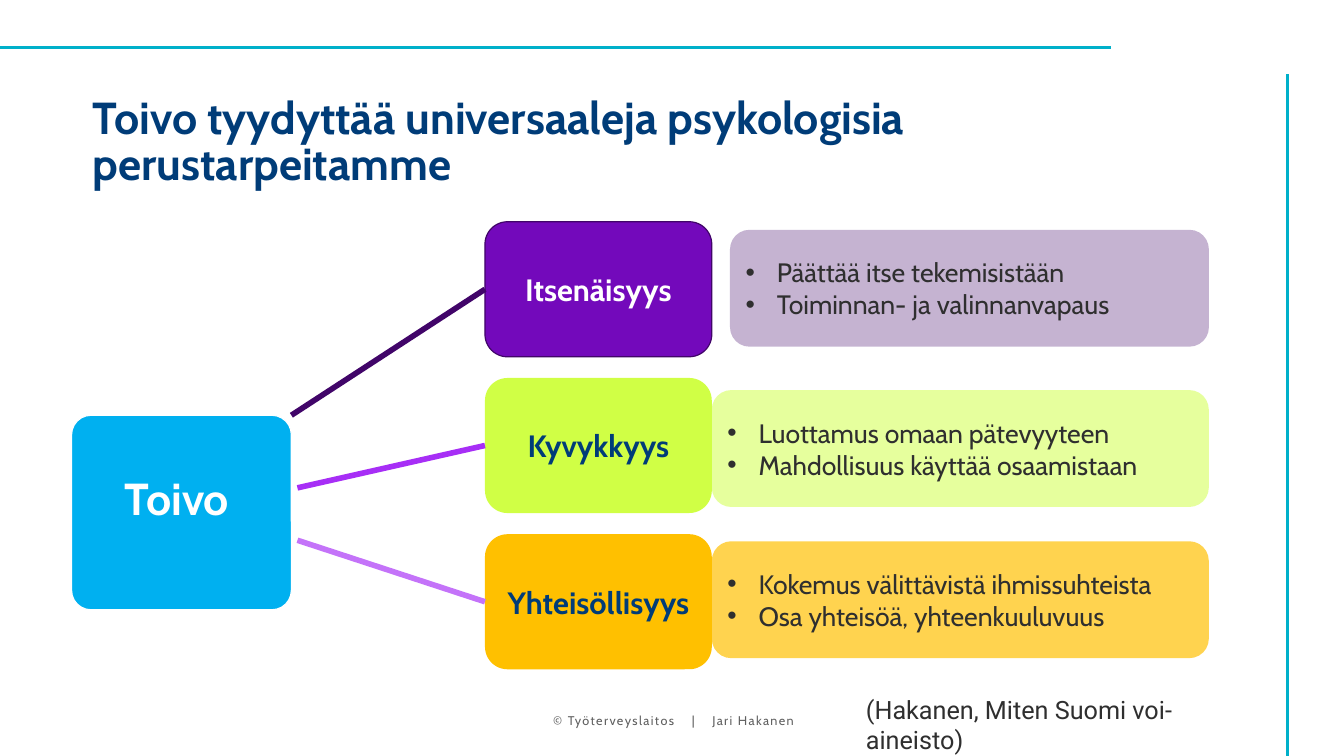
import lxml.etree
import pptx
import pptx.dml.color
import pptx.enum.shapes
import pptx.enum.text
import pptx.oxml.ns
import pptx.util

PX = 9144  # EMU in one px, 100 px to the inch
COLORS = {
    "teal": "00B0CA", "navy": "003C78", "grey": "606060", "text": "2F2F2F",
    "white": "FFFFFF", "sky": "00B0F0", "plum": "410569", "violet": "7309BB",
    "purple": "A72EF6", "lilac": "C473F9", "lime": "D0FF45", "amber": "FFC000",
}
CENTER = pptx.enum.text.PP_ALIGN.CENTER
MIDDLE = pptx.enum.text.MSO_ANCHOR.MIDDLE

# name, fill, outline, font colour, connector colour, connector start,
# detail left, detail top, detail opacity, detail fill, details
NEEDS = [
    ("Itsenäisyys", "violet", "plum", "white", "plum", (289, 412),
     724, 228, 30, "plum",
     ["Päättää itse tekemisistään", "Toiminnan- ja valinnanvapaus"]),
    ("Kyvykkyys", "lime", None, "navy", "purple", (295, 484),
     706, 387, 52, "lime",
     ["Luottamus omaan pätevyyteen", "Mahdollisuus käyttää osaamistaan"]),
    ("Yhteisöllisyys", "amber", None, "navy", "lilac", (295, 536),
     706, 537, 69, "amber",
     ["Kokemus välittävistä ihmissuhteista", "Osa yhteisöä, yhteenkuuluvuus"]),
]
NEED_TOP, NEED_PITCH = 220, 155
DETAIL_RIGHT = 1199


def px(*lengths):
    return [length * PX for length in lengths]


def rgb(color):
    return pptx.dml.color.RGBColor.from_string(COLORS[color])


def add_xml(parent, tag, **attributes):
    return lxml.etree.SubElement(parent, pptx.oxml.ns.qn(tag), attributes)


def set_font(paragraph, size, color, bold=False, name="Cabin"):
    font = paragraph.font
    font.name, font.size, font.bold = name, pptx.util.Pt(size), bold
    font.color.rgb = rgb(color)


def set_insets(frame, left, top, right, bottom):
    (frame.margin_left, frame.margin_top,
     frame.margin_right, frame.margin_bottom) = px(left, top, right, bottom)


def add_text_box(slide, box, text=""):
    frame = slide.shapes.add_textbox(*px(*box)).text_frame
    frame.word_wrap = True
    frame.text = text
    return frame


def add_card(slide, box, fill, outline=None, opacity=100):
    """Add a rounded rectangle whose fill may be see-through."""
    card = slide.shapes.add_shape(
        pptx.enum.shapes.MSO_SHAPE.ROUNDED_RECTANGLE, *px(*box))
    card.shadow.inherit = False
    card.fill.solid()
    card.fill.fore_color.rgb = rgb(fill)
    if opacity < 100:
        fill_color = card.fill._xPr.find(".//" + pptx.oxml.ns.qn("a:srgbClr"))
        add_xml(fill_color, "a:alpha", val=str(opacity * 1000))
    if outline:
        card.line.color.rgb = rgb(outline)
        card.line.width = pptx.util.Pt(0.85)
    else:
        card.line.fill.background()
    card.text_frame.word_wrap = True
    card.text_frame.vertical_anchor = MIDDLE
    return card


def add_label(card, text, size, color):
    label = card.text_frame.paragraphs[0]
    label.text = text
    label.alignment = CENTER
    set_font(label, size, color, bold=True)
    return label


def add_bullets(card, lines):
    frame = card.text_frame
    frame.text = "\n".join(lines)
    for paragraph in frame.paragraphs:
        paragraph.alignment = pptx.enum.text.PP_ALIGN.LEFT
        properties = paragraph._p.get_or_add_pPr()
        properties.set("marL", str(31 * PX))
        properties.set("indent", str(-31 * PX))
        add_xml(properties, "a:buFont", typeface="Arial")
        add_xml(properties, "a:buChar", char="•")
        set_font(paragraph, 19, "text")


def add_line(slide, start, end, color, width):
    line = slide.shapes.add_connector(
        pptx.enum.shapes.MSO_CONNECTOR.STRAIGHT, *px(*start, *end))
    line.line.color.rgb = rgb(color)
    line.line.width = pptx.util.Pt(width)
    add_xml(line._element.spPr, "a:effectLst")
    return line


def add_title(slide):
    frame = add_text_box(
        slide, (92, 103, 1126, 85),
        "Toivo tyydyttää universaaleja psykologisia perustarpeitamme")
    set_insets(frame, 0, 0, 0, 0)
    frame.vertical_anchor = pptx.enum.text.MSO_ANCHOR.BOTTOM
    title = frame.paragraphs[0]
    title.line_spacing = 0.85
    set_font(title, 32, "navy", bold=True)


def add_footer(slide):
    """Add the copyright line; wide tracking sets its divider apart."""
    frame = add_text_box(slide, (253, 695, 830, 40))
    frame.vertical_anchor = MIDDLE
    footer = frame.paragraphs[0]
    footer.alignment = CENTER
    set_font(footer, 9, "grey")
    for text, tracking in (("© Työterveyslaitos", 100), (" |", 960),
                           (" Jari Hakanen", 100)):
        run = footer.add_run()
        run.text = text
        run._r.get_or_add_rPr().set("spc", str(tracking))


def add_hope(slide):
    hope = add_card(slide, (71, 412, 218, 193), "sky", "white")
    hope.adjustments[0] = 0.1
    set_insets(hope.text_frame, 9, 10, 18, 33)
    add_label(hope, "Toivo", 32, "white").line_spacing = 0.9


def add_need(slide, row, need):
    (name, fill, outline, font_color, line_color, start,
     detail_left, detail_top, opacity, detail_fill, details) = need
    top, height = NEED_TOP + row * NEED_PITCH, 134
    detail_box = (detail_left, detail_top, DETAIL_RIGHT - detail_left, 116)
    add_bullets(add_card(slide, detail_box, detail_fill, opacity=opacity),
                details)
    card = add_card(slide, (481, top, 225, height), fill, outline)
    add_label(card, name, 22, font_color)
    link = add_line(slide, start, (481, top + height // 2), line_color, 4)
    link.end_connect(card, 1)


def add_source(slide):
    frame = add_text_box(slide, (849, 684, 403, 40),
                         "(Hakanen, Miten Suomi voi-aineisto)")
    set_font(frame.paragraphs[0], 18, "text", name="Roboto")


def main():
    deck = pptx.Presentation()
    deck.slide_width, deck.slide_height = px(1333, 750)
    slide = deck.slides.add_slide(deck.slide_layouts[6])
    add_line(slide, (0, 47), (1102, 47), "teal", 1.85)
    add_line(slide, (1277, 750), (1277, 73), "teal", 1.85)
    add_title(slide)
    add_footer(slide)
    add_hope(slide)
    for row, need in enumerate(NEEDS):
        add_need(slide, row, need)
    add_source(slide)
    deck.save("out.pptx")


if __name__ == "__main__":
    main()
